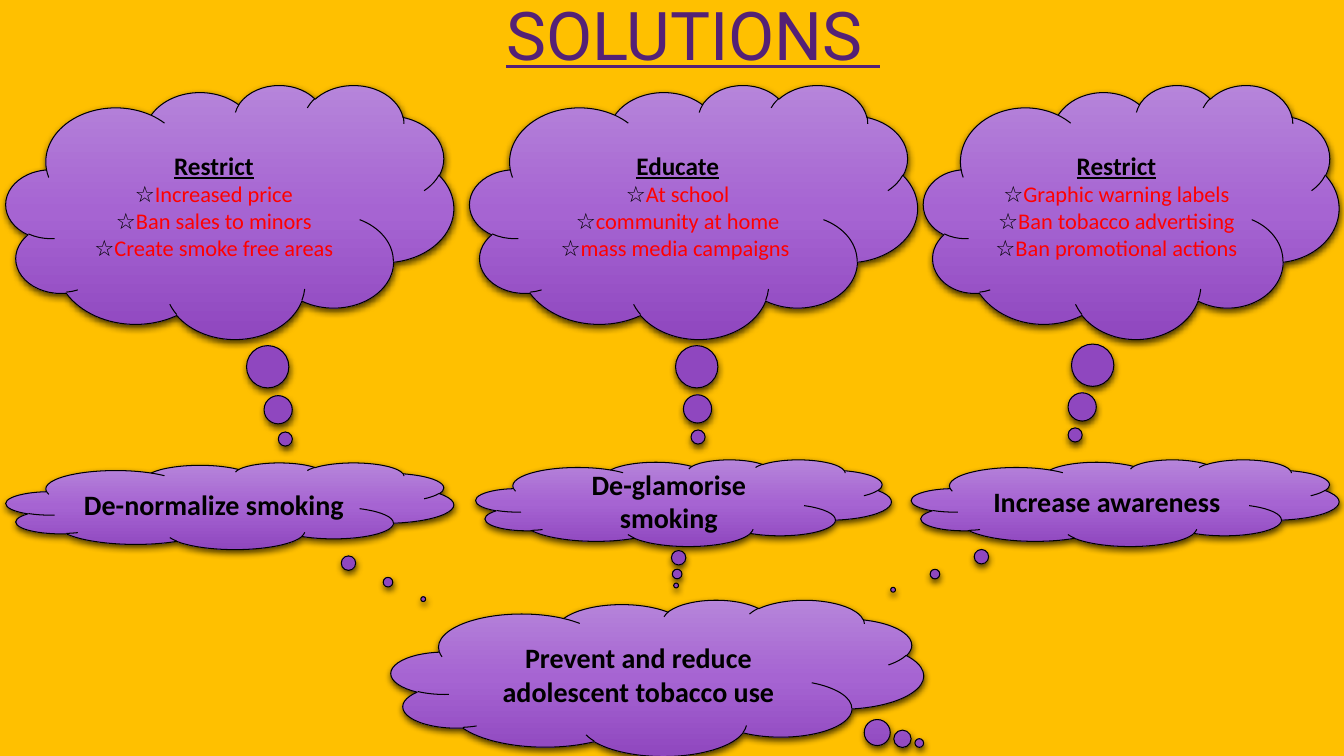
"""Build the SOLUTIONS slide: thought clouds leading to tobacco prevention."""
from dataclasses import dataclass

from lxml.etree import SubElement
from pptx import Presentation
from pptx.dml.color import RGBColor
from pptx.enum.shapes import MSO_SHAPE
from pptx.enum.text import MSO_ANCHOR, PP_ALIGN
from pptx.oxml.ns import qn
from pptx.util import Pt

TITLE = "SOLUTIONS "
TITLE_BOX = (121, -68, 1133, 212)

MEASURES = [
    ((6, 84, 444, 252), (0.124, 0.895), "Restrict",
     ["Increased price", "Ban sales to minors", "Create smoke free areas"]),
    ((466, 84, 444, 252), (0.01, 0.887), "Educate",
     ["At school", "community at home", "mass media campaigns "]),
    ((916, 84, 412, 252), (-0.135, 0.879), "Restrict",
     ["Graphic warning labels", "Ban tobacco advertising", "Ban promotional actions"]),
]
OUTCOMES = [
    ((6, 459, 444, 86), (0.432, 1.075), "De-normalize smoking"),
    ((472, 456, 412, 86), (-0.018, 0.953), "De-glamorise smoking"),
    ((904, 456, 424, 86), (-0.543, 1.002), "Increase awareness "),
    ((388, 595, 528, 155), (0.492, 0.417), "Prevent and reduce adolescent tobacco use"),
]


@dataclass(frozen=True)
class Theme:
    background: str = "FFC000"
    title: str = "542176"
    ink: str = "000000"
    accent: str = "FF0000"
    gradient: tuple = ((0, "B685DA"), (50, "A664D2"), (100, "8F47BF"))
    title_font: str = "Roboto"
    body_font: str = "Calibri"
    title_size: int = 48
    outcome_size: int = 20
    heading_size: int = 18
    item_size: int = 16


THEME = Theme()
EMU_PER_PX = 9144


def px(*lengths):
    return [length * EMU_PER_PX for length in lengths]


def style(run, size, color=THEME.ink, name=THEME.body_font, bold=False, underline=False):
    font = run.font
    font.name, font.size = name, Pt(size)
    font.bold, font.underline = bold, underline
    font.color.rgb = RGBColor.from_string(color)


def add_color(parent, color):
    return SubElement(parent, qn("a:srgbClr"), val=color)


def add_cloud(slide, box, tail):
    shape = slide.shapes.add_shape(MSO_SHAPE.CLOUD_CALLOUT, *px(*box))
    for index, value in enumerate(tail):
        shape.adjustments[index] = value
    shape.fill.gradient()
    shape.fill.gradient_angle = 270
    shape.line.color.rgb = RGBColor.from_string(THEME.ink)
    shape.line.width = Pt(0.75)
    shape.shadow.inherit = False

    properties = shape.element.spPr
    stops = properties.find(qn("a:gradFill")).find(qn("a:gsLst"))
    for stop in list(stops):
        stops.remove(stop)
    for percent, color in THEME.gradient:
        add_color(SubElement(stops, qn("a:gs"), pos=str(percent * 1000)), color)
    shadow = SubElement(
        properties.find(qn("a:effectLst")), qn("a:outerShdw"),
        blurRad=str(Pt(5)), dist=str(Pt(2)), dir="5400000", algn="ctr", rotWithShape="0")
    SubElement(add_color(shadow, THEME.ink), qn("a:alpha"), val="69000")

    shape.text_frame.vertical_anchor = MSO_ANCHOR.MIDDLE
    return shape.text_frame


def add_measure(slide, box, tail, heading, items):
    text_frame = add_cloud(slide, box, tail)
    text_frame.text = heading
    style(text_frame.paragraphs[0].runs[0], THEME.heading_size, bold=True, underline=True)
    for item in items:
        paragraph = text_frame.add_paragraph()
        for text, color, bold in (("☆", THEME.ink, True), (item, THEME.accent, False)):
            run = paragraph.add_run()
            run.text = text
            style(run, THEME.item_size, color, bold=bold)
    for paragraph in text_frame.paragraphs:
        paragraph.alignment = PP_ALIGN.CENTER


def add_outcome(slide, box, tail, text):
    text_frame = add_cloud(slide, box, tail)
    text_frame.text = text
    paragraph = text_frame.paragraphs[0]
    paragraph.alignment = PP_ALIGN.CENTER
    style(paragraph.runs[0], THEME.outcome_size, bold=True)


def add_title(slide):
    title = slide.shapes.title
    title.left, title.top, title.width, title.height = px(*TITLE_BOX)
    title.text_frame.text = TITLE
    title.text_frame.vertical_anchor = MSO_ANCHOR.MIDDLE
    paragraph = title.text_frame.paragraphs[0]
    paragraph.alignment = PP_ALIGN.CENTER
    paragraph.line_spacing = 0.9
    style(paragraph.runs[0], THEME.title_size, THEME.title, THEME.title_font, underline=True)


def main():
    presentation = Presentation()
    presentation.slide_width, presentation.slide_height = px(1333, 750)
    slide = presentation.slides.add_slide(presentation.slide_layouts.get_by_name("Title Only"))
    slide.background.fill.solid()
    slide.background.fill.fore_color.rgb = RGBColor.from_string(THEME.background)
    add_title(slide)
    for measure in MEASURES:
        add_measure(slide, *measure)
    for outcome in OUTCOMES:
        add_outcome(slide, *outcome)
    presentation.save("out.pptx")


if __name__ == "__main__":
    main()
